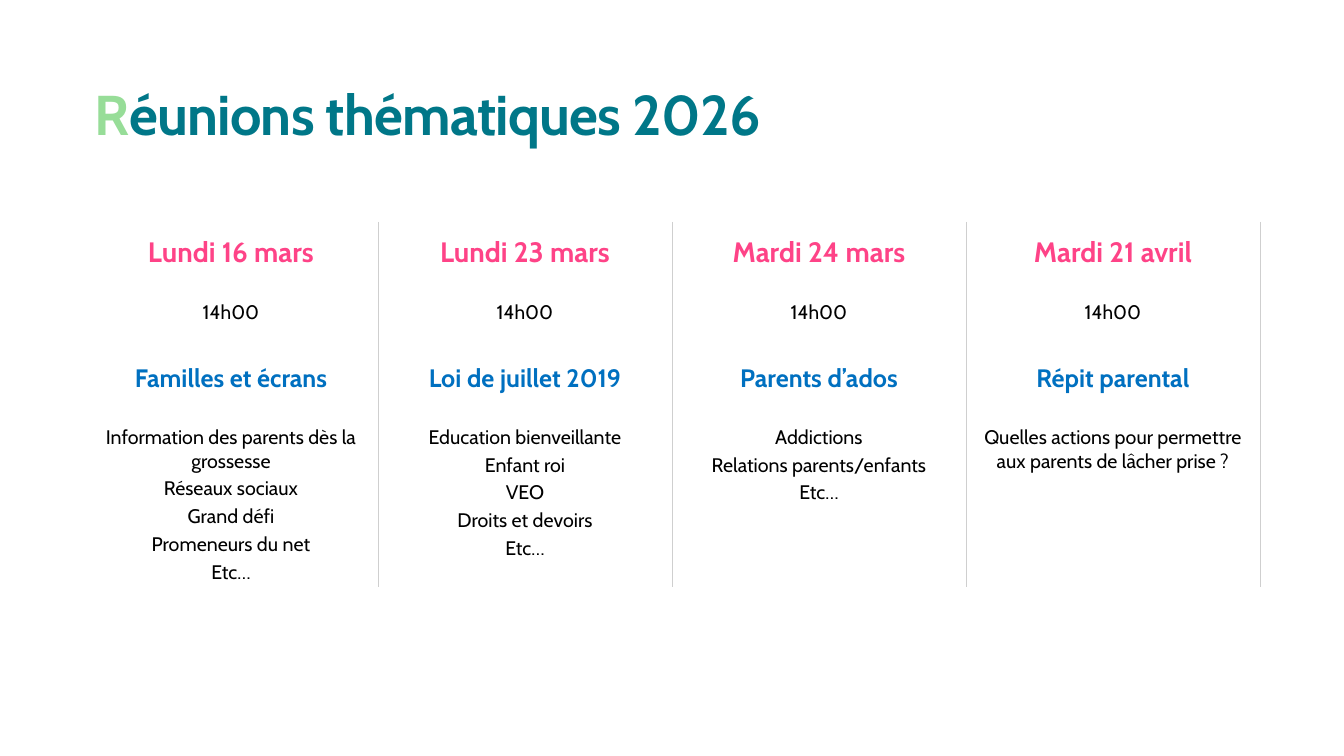
from dataclasses import dataclass

from lxml.etree import SubElement
from pptx import Presentation
from pptx.dml.color import RGBColor
from pptx.enum.text import MSO_ANCHOR, MSO_AUTO_SIZE, PP_ALIGN
from pptx.oxml.ns import qn
from pptx.slide import Slide
from pptx.table import Table, _Cell
from pptx.text.text import _Paragraph
from pptx.util import Pt


@dataclass(frozen=True)
class TextStyle:
    size: float
    color: str
    bold: bool = False
    tracking: float = 0


@dataclass(frozen=True)
class Theme:
    font: str = "Cabin"
    rule_color: str = "CFCFCF"
    rule_width: float = 0.5
    initial: TextStyle = TextStyle(40, "97DD98", True, -0.5)
    title: TextStyle = TextStyle(40, "007788", True, -0.5)
    date: TextStyle = TextStyle(20, "FE4387", True)
    topic: TextStyle = TextStyle(18, "0070C0", True)
    body: TextStyle = TextStyle(14, "000000")
    item_gap: float = 2.8
    topic_gap: float = 22.6


@dataclass(frozen=True)
class Meeting:
    date: str
    time: str
    topic: str
    items: tuple[str, ...]


THEME = Theme()
LEFT, WIDTH = 60, 840
TITLE_TOP, TITLE_HEIGHT = 56.2, 48.6
TABLE_TOP = 158.4
ROW_HEIGHTS = (43.2, 43.2, 136.8)
NO_STYLE_NO_GRID = "{2D5ABB26-0587-4C30-8999-92F81FD0307C}"

MEETINGS = (
    Meeting("Lundi 16 mars", "14h00", "Familles et écrans",
            ("Information des parents dès la grossesse", "Réseaux sociaux",
             "Grand défi", "Promeneurs du net", "Etc…")),
    Meeting("Lundi 23 mars", "14h00", "Loi de juillet 2019",
            ("Education bienveillante", "Enfant roi", "VEO",
             "Droits et devoirs", "Etc…")),
    Meeting("Mardi 24 mars", "14h00", "Parents d’ados",
            ("Addictions", "Relations parents/enfants", "Etc…")),
    Meeting("Mardi 21 avril", "14h00", "Répit parental",
            ("Quelles actions pour permettre aux parents de lâcher prise ?",)),
)


def add_run(paragraph: _Paragraph, text: str, style: TextStyle) -> None:
    run = paragraph.add_run()
    run.text = text
    run.font.name = THEME.font
    run.font.size = Pt(style.size)
    run.font.bold = style.bold
    run.font.color.rgb = RGBColor.from_string(style.color)
    if style.tracking:
        run.font._element.set("spc", str(round(style.tracking * 100)))


def add_title(slide: Slide) -> None:
    title = slide.shapes.title
    title.left, title.top = Pt(LEFT), Pt(TITLE_TOP)
    title.width, title.height = Pt(WIDTH), Pt(TITLE_HEIGHT)
    frame = title.text_frame
    frame.word_wrap = True
    frame.auto_size = MSO_AUTO_SIZE.SHAPE_TO_FIT_TEXT
    frame.vertical_anchor = MSO_ANCHOR.BOTTOM
    frame.margin_left = frame.margin_right = Pt(7.2)
    frame.margin_top = frame.margin_bottom = Pt(0)
    paragraph = frame.paragraphs[0]
    paragraph.alignment = PP_ALIGN.LEFT
    add_run(paragraph, "R", THEME.initial)
    add_run(paragraph, "éunions thématiques 2026", THEME.title)


def add_right_rule(cell: _Cell) -> None:
    properties = cell._tc.get_or_add_tcPr()
    line = SubElement(properties, qn("a:lnR"), w=str(Pt(THEME.rule_width)))
    fill = SubElement(line, qn("a:solidFill"))
    SubElement(fill, qn("a:srgbClr"), val=THEME.rule_color)
    properties.insert(0, line)


def write_centred(paragraph: _Paragraph, text: str, style: TextStyle,
                  gap: float = 0) -> None:
    paragraph.alignment = PP_ALIGN.CENTER
    paragraph.space_before = Pt(gap)
    add_run(paragraph, text, style)


def fill_column(table: Table, column: int, meeting: Meeting) -> None:
    date, time, programme = (table.cell(row, column) for row in range(len(ROW_HEIGHTS)))
    for cell in (date, time, programme):
        cell.fill.background()
        add_right_rule(cell)
    for cell, text, style in ((date, meeting.date, THEME.date),
                              (time, meeting.time, THEME.body)):
        cell.vertical_anchor = MSO_ANCHOR.MIDDLE
        write_centred(cell.text_frame.paragraphs[0], text, style)

    programme.margin_top = Pt(14.4)
    frame = programme.text_frame
    write_centred(frame.paragraphs[0], meeting.topic, THEME.topic)
    for index, item in enumerate(meeting.items):
        gap = THEME.item_gap if index else THEME.topic_gap
        write_centred(frame.add_paragraph(), item, THEME.body, gap)


def add_meetings(slide: Slide) -> None:
    frame = slide.shapes.add_table(len(ROW_HEIGHTS), len(MEETINGS), Pt(LEFT),
                                   Pt(TABLE_TOP), Pt(WIDTH), Pt(sum(ROW_HEIGHTS)))
    table = frame.table
    table.horz_banding = False
    table._tbl.tblPr.find(qn("a:tableStyleId")).text = NO_STYLE_NO_GRID
    for row, height in zip(table.rows, ROW_HEIGHTS):
        row.height = Pt(height)
    for column, meeting in enumerate(MEETINGS):
        fill_column(table, column, meeting)


def main() -> None:
    presentation = Presentation()
    presentation.slide_width, presentation.slide_height = Pt(960), Pt(540)
    slide = presentation.slides.add_slide(presentation.slide_layouts.get_by_name("Title Only"))
    add_title(slide)
    add_meetings(slide)
    presentation.save("out.pptx")


if __name__ == "__main__":
    main()
